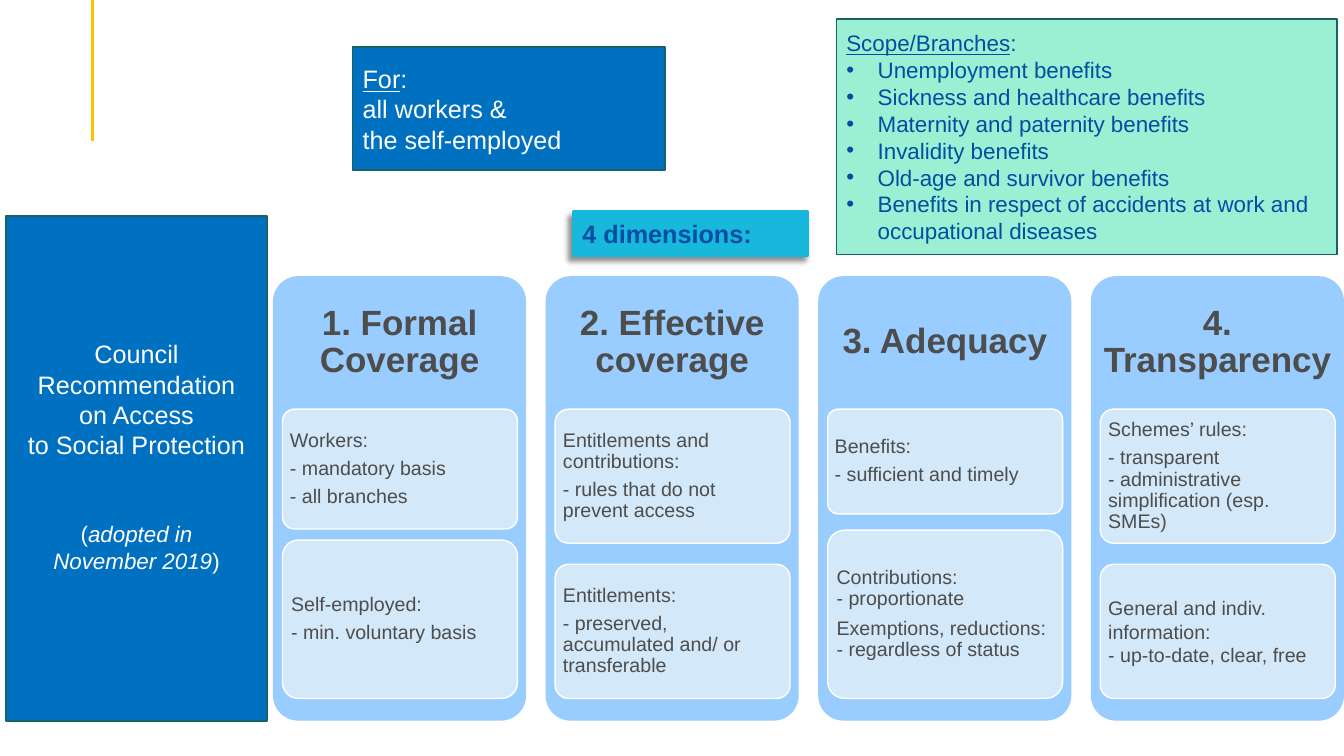
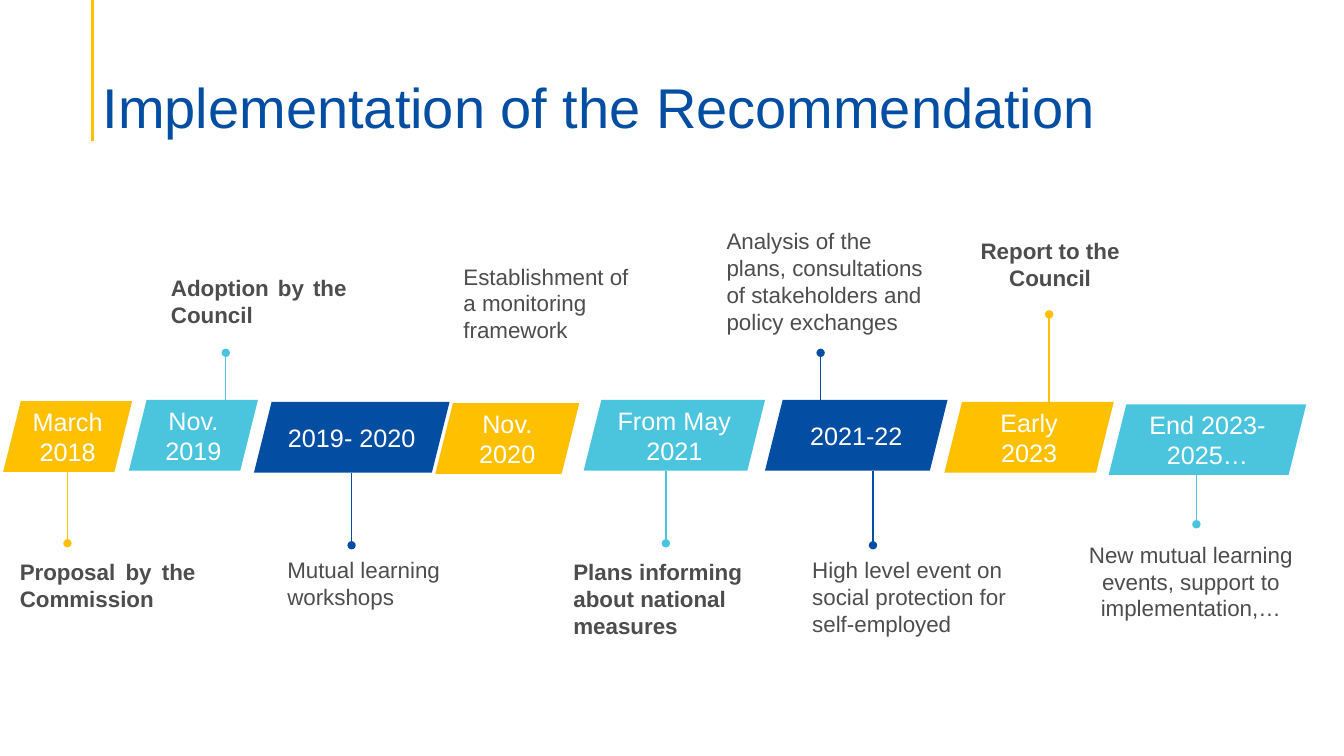
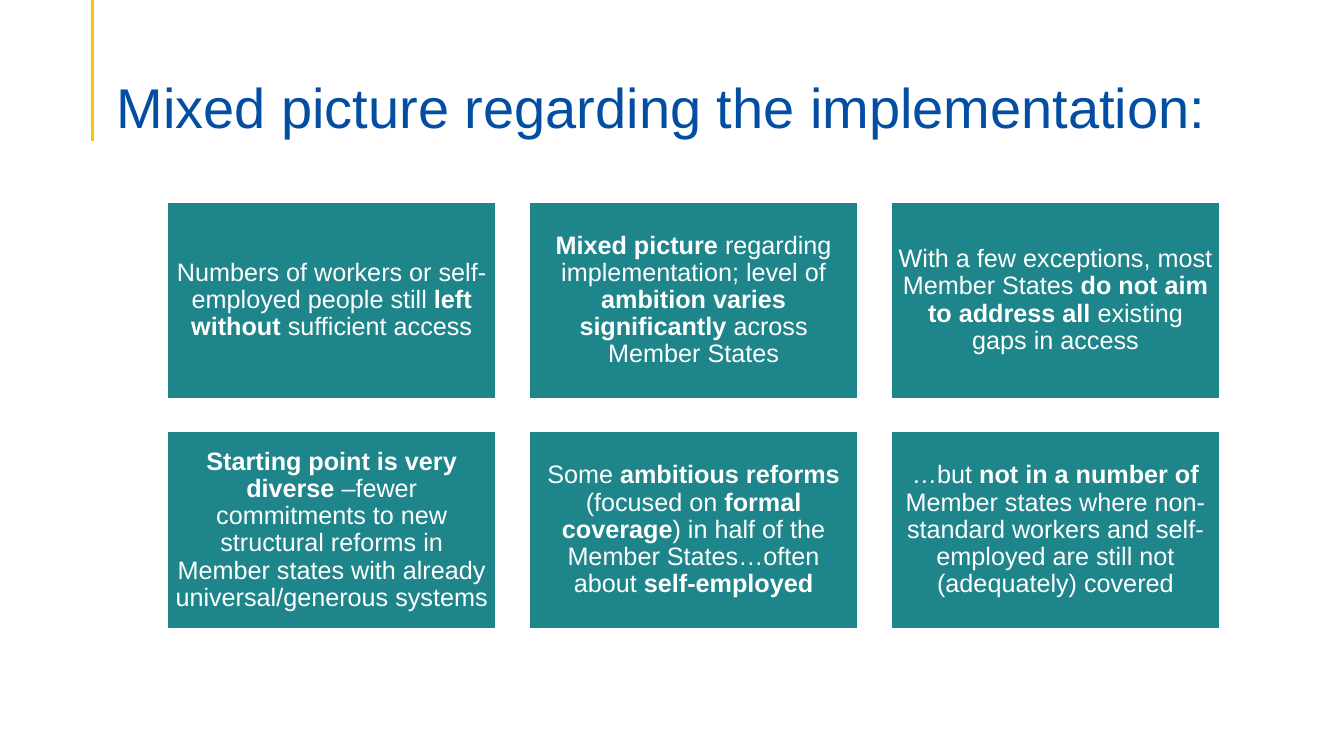
"""Builds three slides on access to social protection."""
from itertools import cycle

from lxml.etree import SubElement as Sub
from pptx import Presentation
from pptx.dml.color import RGBColor as Rgb
from pptx.enum.shapes import MSO_CONNECTOR as Link, MSO_SHAPE as Form
from pptx.enum.text import MSO_ANCHOR as Anchor, PP_ALIGN as Align
from pptx.oxml.ns import qn
from pptx.util import Cm, Pt

HUES = {
    "gold": "FFC000", "navy": "034EA2", "cyan": "4BC5DE", "blue": "0070C0",
    "sky": "99CCFF", "pale": "D3E8F9", "mint": "9BEFD3", "aqua": "18B7DC",
    "teal": "1E858B", "edge": "166267", "grey": "4D4D4D", "white": "FFFFFF",
    "black": "000000",
}
FONT = "Arial"

PILLARS = [
    ("1. Formal Coverage", [
        (3.02, ["Workers:", "- mandatory basis", "- all branches"], (5, 5), 0.9),
        (3.99, ["Self-employed:", "- min. voluntary basis"], (5,), 0.9)]),
    ("2. Effective coverage", [
        (3.38, ["Entitlements and contributions:",
                "- rules that do not prevent access"], (5,), 0.9),
        (3.38, ["Entitlements:",
                "- preserved, accumulated and/ or transferable"], (5,), 0.9)]),
    ("3. Adequacy", [
        (2.64, ["Benefits:", "- sufficient and timely"], (5,), 0.9),
        (4.24, ["Contributions:", "- proportionate", "Exemptions, reductions:",
                "- regardless of status"], (0, 6, 0), 0.9)]),
    ("4. Transparency", [
        (3.38, ["Schemes’ rules:", "- transparent",
                "- administrative simplification (esp. SMEs)"], (5, 0), 0.9),
        (3.38, ["General and indiv. information:",
                "- up-to-date, clear, free"], (), 1)]),
]

SCOPE = [
    [("Scope/Branches", "u"), ":"],
    "Unemployment benefits",
    "Sickness and healthcare benefits",
    "Maternity and paternity benefits",
    "Invalidity benefits",
    "Old-age and survivor benefits",
    "Benefits in respect of accidents at work and occupational diseases",
]

STEPS = [
    (0.08, 10.11, 3.25, ["March 2018"], [(1.7, 13.69)]),
    (3.25, 10.08, 3.25, ["Nov.", "2019"], [(5.69, 8.89)]),
    (6.4, 10.13, 4.93, ["2019- 2020"], [(8.86, 13.74)]),
    (10.97, 10.16, 3.63, ["Nov. 2020"], []),
    (14.71, 10.08, 4.57, ["From May 2021"], [(16.78, 13.69)]),
    (19.28, 10.08, 4.6, ["2021-22"], [(20.68, 8.89), (22, 13.74)]),
    (23.8, 10.13, 4.27, ["Early 2023"], [(26.44, 7.92)]),
    (27.94, 10.19, 4.98, ["End 2023-2025…"], [(30.15, 13.21)]),
]

NOTES = [
    (4.06, 6.78, 4.93, 1.63, "Adoption by the Council", "b", Align.JUSTIFY),
    (11.43, 6.48, 4.72, 2.31, "Establishment of a monitoring framework", "", Align.LEFT),
    (18.06, 5.59, 5.72, 3, "Analysis of the plans, consultations of stakeholders "
     "and policy exchanges", "", Align.LEFT),
    (24.13, 5.84, 4.67, 1.63, "Report to the Council", "b", Align.CENTER),
    (0.25, 13.92, 4.93, 1.63, "Proposal by the Commission", "b", Align.JUSTIFY),
    (6.99, 13.87, 5.74, 1.63, "Mutual learning workshops", "", Align.LEFT),
    (14.2, 13.92, 5.59, 2.31, "Plans informing about national measures", "b", Align.LEFT),
    (20.22, 13.87, 5.72, 2.31, "High level event on social protection for "
     "self-employed", "", Align.LEFT),
    (26.67, 13.49, 6.68, 2.31, "New mutual learning events, support to "
     "implementation,…", "", Align.CENTER),
]

FACTS = [
    ["Numbers of workers or self-employed people still ",
     ("left without ", "b"), "sufficient access"],
    [("Mixed picture ", "b"), "regarding implementation; level of ",
     ("ambition varies significantly ", "b"), "across Member States"],
    ["With a few exceptions, most Member States ",
     ("do not aim to address all ", "b"), "existing gaps in access"],
    [("Starting point is very diverse ", "b"),
     "–fewer commitments to new structural reforms in Member states with "
     "already universal/generous systems"],
    ["Some ", ("ambitious reforms ", "b"), "(focused on ", ("formal coverage", "b"),
     ") in half of the Member States…often about ", ("self-employed", "b")],
    ["…but ", ("not in a number of ", "b"),
     "Member states where non-standard workers and self-employed are still "
     "not (adequately) covered"],
]


def tint(name):
    return Rgb.from_string(HUES[name])


def dot(para):
    props = para._p.get_or_add_pPr()
    props.set("marL", str(Cm(0.79)))
    props.set("indent", str(-Cm(0.79)))
    Sub(props, qn("a:buFont"), typeface=FONT)
    Sub(props, qn("a:buChar"), char="•")


def write(shape, paras, size, hue, align=Align.LEFT, lead=1, gaps=(), pad=(0.25, 0.13),
          foot=None, dots=False, anchor=Anchor.MIDDLE):
    frame = shape.text_frame
    frame.word_wrap = True
    frame.vertical_anchor = anchor
    frame.margin_left = frame.margin_right = Cm(pad[0])
    frame.margin_top = Cm(pad[1])
    frame.margin_bottom = Cm(pad[1] if foot is None else foot)
    for i, runs in enumerate(paras):
        para = frame.add_paragraph() if i else frame.paragraphs[0]
        para.alignment = align
        para.line_spacing = lead
        if i < len(gaps):
            para.space_after = Pt(gaps[i])
        if dots and i:
            dot(para)
        for part in [runs] if isinstance(runs, str) else runs:
            text, style = (part, "") if isinstance(part, str) else part
            run = para.add_run()
            run.text = text
            font = run.font
            font.name, font.size = FONT, Pt(size)
            font.color.rgb = tint(hue)
            font.bold = "b" in style
            font.italic = "i" in style
            font.underline = "u" in style


def block(slide, form, x, y, w, h, fill, edge=None, width=1):
    shape = slide.shapes.add_shape(form, Cm(x), Cm(y), Cm(w), Cm(h))
    shape.shadow.inherit = False
    shape.fill.solid()
    shape.fill.fore_color.rgb = tint(fill)
    if edge:
        shape.line.color.rgb = tint(edge)
        shape.line.width = Pt(width)
    else:
        shape.line.fill.background()
    if form == Form.ROUNDED_RECTANGLE:
        shape.adjustments[0] = 0.1
    return shape


def label(slide, x, y, w, h, paras, size, hue, **style):
    box = slide.shapes.add_textbox(Cm(x), Cm(y), Cm(w), Cm(h))
    write(box, paras, size, hue, **style)


def rule(slide, x, top, end, hue, width, tip=False):
    line = slide.shapes.add_connector(Link.STRAIGHT, Cm(x), Cm(top), Cm(x), Cm(end))
    line.line.color.rgb = tint(hue)
    line.line.width = Pt(width)
    props = line.element.spPr
    if tip:
        Sub(props.find(qn("a:ln")), qn("a:tailEnd"), type="oval")
    Sub(props, qn("a:effectLst"))


def shade(shape):
    glow = Sub(shape.element.spPr.find(qn("a:effectLst")), qn("a:outerShdw"),
               blurRad=str(Pt(4)), dist=str(Pt(4)), dir=str(130 * 60000),
               algn="tr", rotWithShape="0")
    tone = Sub(glow, qn("a:srgbClr"), val=HUES["black"])
    Sub(tone, qn("a:alpha"), val="43000")


def page(deck, title=None, x=2.34):
    slide = deck.slides.add_slide(deck.slide_layouts[6])
    rule(slide, 2.34, 0, 3.56, "gold", 2.25)
    if title:
        label(slide, x, 1.36, 29.21, 2.18, [title], 40, "navy", lead=0.9,
              foot=0, anchor=Anchor.BOTTOM)
    return slide


def pillar(slide, x, head, cards):
    block(slide, Form.ROUNDED_RECTANGLE, x, 6.96, 6.38, 11.2, "sky")
    label(slide, x, 6.96, 6.38, 3.35, [[(head, "b")]], 25, "grey",
          align=Align.CENTER, lead=0.9, pad=(0.25, 0.25))
    for i, (h, paras, gaps, lead) in enumerate(cards):
        y = 17.6 - h if i else 10.31
        card = block(slide, Form.ROUNDED_RECTANGLE, x + 0.24, y, 5.92, h, "pale", "white")
        write(card, paras, 14, "grey", lead=lead, gaps=gaps, pad=(0.1, 0.08))


def scheme(deck):
    slide = page(deck)
    for i, (head, cards) in enumerate(PILLARS):
        pillar(slide, 6.88 + 6.87 * i, head, cards)
    group = block(slide, Form.RECTANGLE, 8.89, 1.19, 7.87, 3.1, "blue", "edge")
    write(group, [[("For", "u"), ":"], "all workers &", "the self-employed"], 18, "white")
    scope = block(slide, Form.RECTANGLE, 21.08, 0.48, 12.62, 5.94, "mint", "edge")
    write(scope, SCOPE, 16, "navy", dots=True)
    act = block(slide, Form.RECTANGLE, 0.15, 5.44, 6.58, 12.73, "blue", "edge")
    write(act, ["Council Recommendation", "on Access", "to Social Protection"],
          18, "white", align=Align.CENTER)
    act.text_frame.clear()
    write(act, ["Council Recommendation", "on Access", "to Social Protection",
                ["(", ("adopted in", "i")], [("November 2019", "i"), ")"]],
          18, "white", align=Align.CENTER, gaps=(0, 0, 43), foot=0.75)
    for para in act.text_frame.paragraphs[3:]:
        for run in para.runs:
            run.font.size = Pt(16)
    sign = block(slide, Form.RECTANGLE, 14.43, 5.33, 5.94, 1.12, "aqua", "aqua", 1.5)
    shade(sign)
    write(sign, [[("4 dimensions:", "b")]], 18, "navy")


def track(deck):
    slide = page(deck, "Implementation of the Recommendation")
    high = 1.78
    for (x, y, w, paras, pins), hue in zip(STEPS, cycle(("gold", "cyan", "navy"))):
        step = block(slide, Form.PARALLELOGRAM, x, y, w, high, hue)
        write(step, paras, 18, "white", align=Align.CENTER)
        for spot, end in pins:
            rule(slide, spot, y if end < y else y + high, end, hue, 1, tip=True)
    for x, y, w, h, text, style, align in NOTES:
        label(slide, x, y, w, h, [[(text, style)]], 16, "grey", align=align)


def grid(deck):
    slide = page(deck, "Mixed picture regarding the implementation:", 2.69)
    for i, fact in enumerate(FACTS):
        row, col = divmod(i, 3)
        tile = block(slide, Form.RECTANGLE, 4.22 + 9.12 * col, 5.08 + 5.79 * row,
                     8.28, 4.98, "teal", "white", 1.5)
        write(tile, [fact], 18, "white", align=Align.CENTER, lead=0.9, pad=(0.18, 0.18))


def main():
    deck = Presentation()
    deck.slide_width, deck.slide_height = Cm(33.87), Cm(19.05)
    scheme(deck)
    track(deck)
    grid(deck)
    deck.save("out.pptx")


if __name__ == "__main__":
    main()
